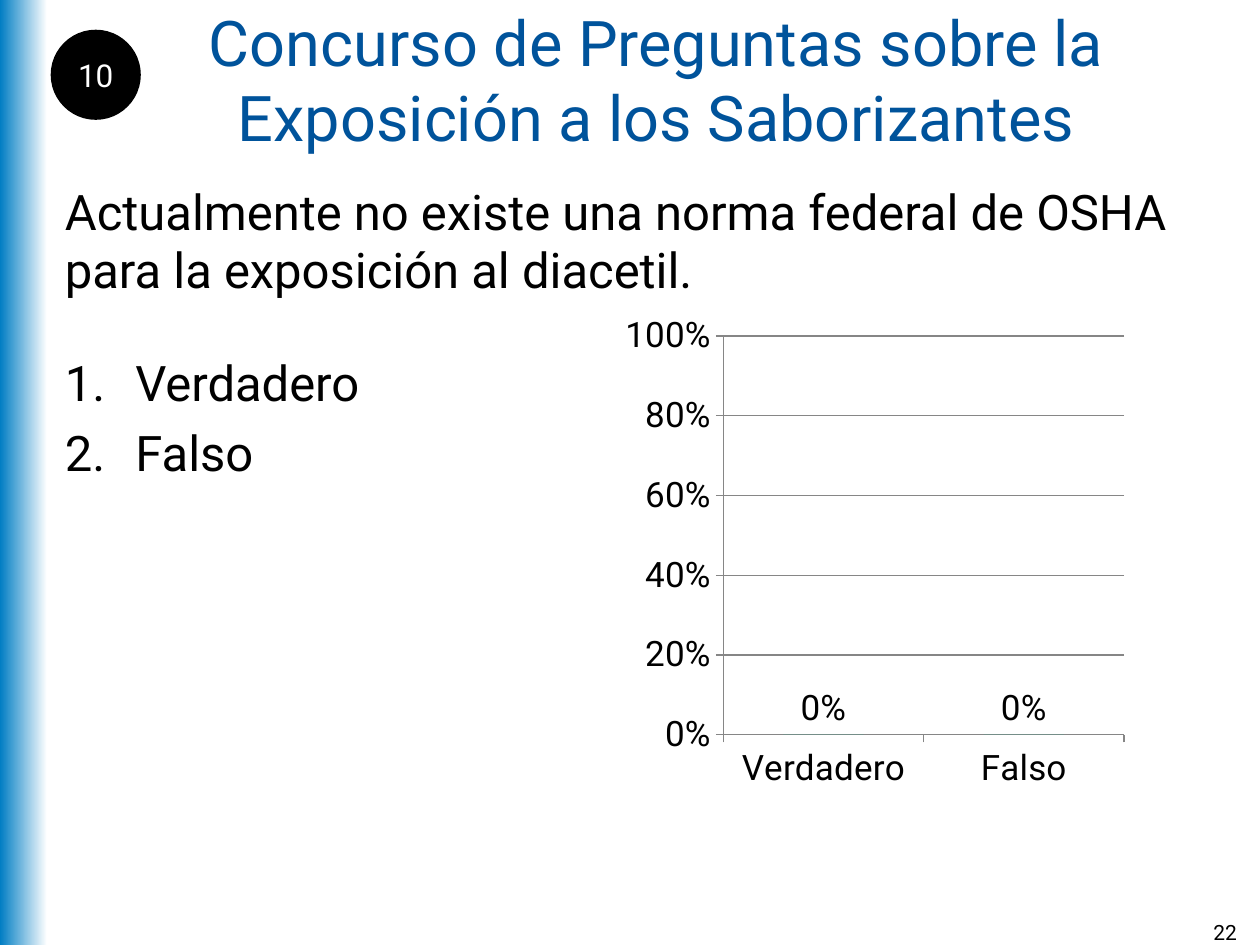
from lxml.etree import SubElement
from pptx import Presentation
from pptx.chart.data import CategoryChartData
from pptx.dml.color import RGBColor
from pptx.enum.chart import XL_CHART_TYPE as ChartType
from pptx.enum.chart import XL_LABEL_POSITION as LabelPosition
from pptx.enum.chart import XL_TICK_MARK as TickMark
from pptx.enum.shapes import MSO_SHAPE as Shape
from pptx.enum.text import MSO_ANCHOR as Anchor
from pptx.enum.text import PP_ALIGN as Align
from pptx.oxml.ns import qn
from pptx.util import Inches, Pt

WIDTH, HEIGHT = Inches(10), Inches(7.5)
COLUMNS, ROWS = 24, 18
FONT = "Roboto"
BLACK, WHITE, BLUE, SKY = "000000", "FFFFFF", "00539B", "007DC3"
GREEN, GRAY = "00CC99", "868686"


def color(value):
    return RGBColor.from_string(value)


def grid(column, row, columns, rows):
    return (
        int(WIDTH * column / COLUMNS),
        int(HEIGHT * row / ROWS),
        int(WIDTH * columns / COLUMNS),
        int(HEIGHT * rows / ROWS),
    )


def apply(target, values):
    for name, value in values.items():
        setattr(target, name, value)


def style_font(font, size, ink):
    apply(font, {"name": FONT, "size": Pt(size)})
    font.color.rgb = color(ink)


def write(frame, lines, size, ink=BLACK, align=Align.LEFT, gap=0):
    for index, line in enumerate(lines):
        para = frame.paragraphs[0] if index == 0 else frame.add_paragraph()
        apply(para, {"alignment": align, "space_before": Pt(gap)})
        span = para.add_run()
        span.text = line
        style_font(span.font, size, ink)


def add_text(page, place, lines, size, anchor=Anchor.TOP, **style):
    frame = page.shapes.add_textbox(*place).text_frame
    apply(frame, {"word_wrap": True, "vertical_anchor": anchor})
    write(frame, lines, size, **style)
    return frame


def number_list(frame):
    indent = Inches(0.56)
    for para in frame.paragraphs:
        props = para._p.get_or_add_pPr()
        props.set("marL", str(indent))
        props.set("indent", str(-indent))
        SubElement(props, qn("a:buAutoNum"), type="arabicPeriod")


def add_side_band(page, place):
    band = page.shapes.add_shape(Shape.RECTANGLE, *place)
    band.shadow.inherit = False
    band.line.fill.background()
    band.fill.gradient()
    band.fill.gradient_angle = 0
    for stop, value in zip(band.fill.gradient_stops, (SKY, WHITE)):
        stop.color.rgb = color(value)


def add_counter(page, place, label):
    disc = page.shapes.add_shape(Shape.OVAL, *place)
    disc.shadow.inherit = False
    disc.fill.solid()
    disc.fill.fore_color.rgb = color(BLACK)
    disc.line.color.rgb = color(BLACK)
    disc.line.width = Pt(2)
    frame = disc.text_frame
    margins = {f"margin_{side}": 0 for side in ("left", "top", "right", "bottom")}
    apply(frame, {"word_wrap": False, "vertical_anchor": Anchor.MIDDLE, **margins})
    write(frame, [label], 18, ink=WHITE, align=Align.CENTER)


def place_plot(chart, shares):
    area = chart._chartSpace.chart.plotArea
    for old in area.findall(qn("c:layout")):
        area.remove(old)
    layout = SubElement(area, qn("c:layout"))
    area.insert(0, layout)
    manual = SubElement(layout, qn("c:manualLayout"))
    settings = {"layoutTarget": "inner", "xMode": "edge", "yMode": "edge"}
    settings.update(zip("xywh", shares))
    for name, value in settings.items():
        SubElement(manual, qn(f"c:{name}"), val=str(value))


def add_votes_chart(page, place, votes):
    data = CategoryChartData(number_format="0%")
    data.categories = votes.keys()
    data.add_series("Series 1", votes.values())
    chart = page.shapes.add_chart(ChartType.COLUMN_CLUSTERED, *place, data).chart
    apply(chart, {"has_legend": False, "has_title": False})
    style_font(chart.font, 20, BLACK)

    scale = chart.value_axis
    apply(scale, {"minimum_scale": 0, "maximum_scale": 1, "major_unit": 0.2,
                  "has_major_gridlines": True})
    apply(scale.tick_labels, {"number_format": "0%", "number_format_is_linked": False})
    for axis in (scale, chart.category_axis):
        apply(axis, {"major_tick_mark": TickMark.OUTSIDE,
                     "minor_tick_mark": TickMark.NONE})
        axis.format.line.color.rgb = color(GRAY)
    scale.major_gridlines.format.line.color.rgb = color(GRAY)

    plot = chart.plots[0]
    apply(plot, {"gap_width": 150, "vary_by_categories": False, "has_data_labels": True})
    apply(plot.data_labels, {"show_value": True, "number_format": "0%",
                             "number_format_is_linked": False,
                             "position": LabelPosition.OUTSIDE_END})
    style_font(plot.data_labels.font, 20, BLACK)
    fill = plot.series[0].format.fill
    fill.solid()
    fill.fore_color.rgb = color(GREEN)
    place_plot(chart, (0.24, 0.04, 0.71, 0.76))


def main():
    deck = Presentation()
    apply(deck, {"slide_width": WIDTH, "slide_height": HEIGHT})
    page = deck.slides.add_slide(deck.slide_layouts[6])
    votes = {"Verdadero": 0, "Falso": 0}

    add_side_band(page, grid(0, 0, 0.9, ROWS))
    add_text(page, grid(1, 0, 23, 3),
             ["Concurso de Preguntas sobre la Exposición a los Saborizantes"],
             36, anchor=Anchor.MIDDLE, ink=BLUE, align=Align.CENTER)
    add_text(page, grid(22.6, 17.4, 1.2, 0.6), ["22"], 12, align=Align.RIGHT)
    add_text(page, grid(1, 3.33, 22, 1.8),
             ["Actualmente no existe una norma federal de OSHA "
              "para la exposición al diacetil."], 28, gap=6.5)
    answers = add_text(page, grid(1, 6.6, 10.75, 6.8), list(votes), 28, gap=6.5)
    number_list(answers)
    add_counter(page, grid(1, 0.6, 1.65, 1.65), "10")
    add_votes_chart(page, grid(11.2, 6, 10.75, 10), votes)
    deck.save("out.pptx")


if __name__ == "__main__":
    main()
